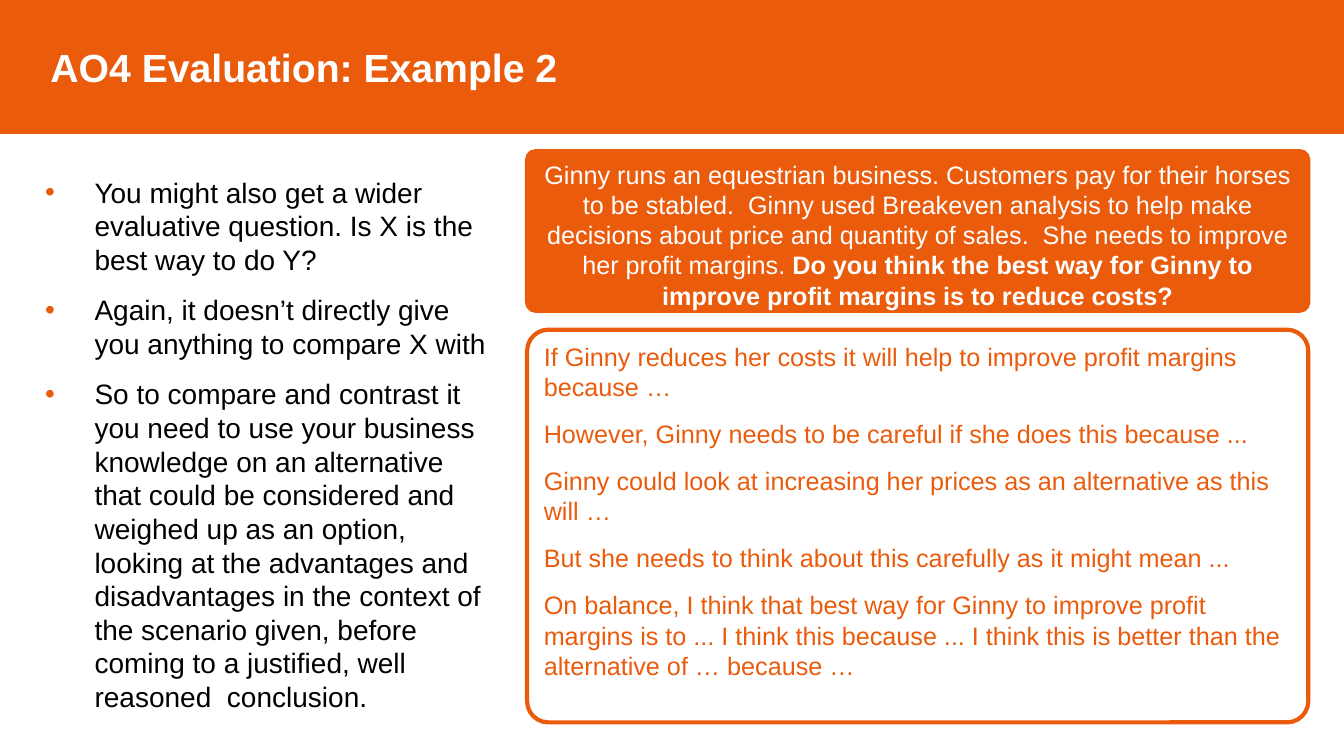
"""Build the AO4 evaluation slide with python-pptx."""
from lxml import etree
from pptx import Presentation
from pptx.dml.color import RGBColor
from pptx.enum.shapes import MSO_SHAPE
from pptx.enum.text import MSO_ANCHOR as ANCHOR, MSO_AUTO_SIZE as FIT, PP_ALIGN as ALIGN
from pptx.oxml.ns import qn
from pptx.util import Emu, Pt

PX = 9525
ORANGE = RGBColor(0xEA, 0x5B, 0x0C)
WHITE = RGBColor(0xFF, 0xFF, 0xFF)
BLACK = RGBColor(0, 0, 0)

ADVICE = [
    "You might also get a wider evaluative question. Is X is the best way to do Y?",
    "Again, it doesn’t directly give you anything to compare X with",
    "So to compare and contrast it you need to use your business knowledge on an "
    "alternative that could be considered and weighed up as an option, looking at the "
    "advantages and disadvantages in the context of the scenario given, before coming "
    "to a justified, well reasoned  conclusion.",
]
SCENARIO = (
    "Ginny runs an equestrian business. Customers pay for their horses to be stabled.  "
    "Ginny used Breakeven analysis to help make decisions about price and quantity of "
    "sales.  She needs to improve her profit margins. "
)
QUESTION = ("Do you think the best way for Ginny to improve profit margins is to reduce "
            "costs?")
STARTERS = [
    "If Ginny reduces her costs it will help to improve profit margins because …",
    "However, Ginny needs to be careful if she does this because ...",
    "Ginny could look at increasing her prices as an alternative as this will …",
    "But she needs to think about this carefully as it might mean ...",
    "On balance, I think that best way for Ginny to improve profit margins is to ... "
    "I think this because ... I think this is better than the alternative of … because …",
]


def px(n):
    return Emu(n * PX)


def place(sp, box):
    for name, n in zip(("left", "top", "width", "height"), box):
        setattr(sp, name, px(n))


def outline(sp, width):
    sp.line.color.rgb = ORANGE
    sp.line.width = Pt(width)


def format_frame(tf, **values):
    base = dict(word_wrap=True, auto_size=FIT.NONE, vertical_anchor=ANCHOR.TOP,
                margin_left=px(10), margin_right=px(10),
                margin_top=px(5), margin_bottom=px(5))
    for name, value in {**base, **values}.items():
        setattr(tf, name, value)


def add_run(p, text, size, color, bold=False):
    r = p.add_run()
    r.text = text
    r.font.color.rgb = color
    for name, value in dict(name="Arial", size=Pt(size), bold=bold).items():
        setattr(r.font, name, value)


def write(tf, paragraphs, size, color, **values):
    """Fill a frame with paragraphs, each a list of (text, bold) runs."""
    base = dict(alignment=ALIGN.LEFT, line_spacing=1.0,
                space_before=Pt(0), space_after=Pt(0))
    for i, runs in enumerate(paragraphs):
        p = tf.add_paragraph() if i else tf.paragraphs[0]
        for name, value in {**base, **values}.items():
            setattr(p, name, value)
        for text, bold in runs:
            add_run(p, text, size, color, bold)


def add_bullet(p, indent):
    pPr = p._p.get_or_add_pPr()
    pPr.set("marL", str(px(indent)))
    pPr.set("indent", str(-px(indent)))
    clr = etree.SubElement(pPr, qn("a:buClr"))
    etree.SubElement(clr, qn("a:srgbClr"), val=str(ORANGE))
    etree.SubElement(pPr, qn("a:buFont"), typeface="Arial")
    etree.SubElement(pPr, qn("a:buChar"), char="•")


def title_band(s, box):
    sp = s.shapes.title
    place(sp, box)
    sp.fill.solid()
    sp.fill.fore_color.rgb = ORANGE
    outline(sp, 1)
    format_frame(sp.text_frame, vertical_anchor=ANCHOR.MIDDLE, margin_left=px(48))
    write(sp.text_frame, [[("AO4 Evaluation: Example 2", True)]], 28, WHITE)


def advice_list(s, box):
    sp = s.placeholders[1]
    place(sp, box)
    format_frame(sp.text_frame, auto_size=FIT.SHAPE_TO_FIT_TEXT)
    write(sp.text_frame, [[(text, False)] for text in ADVICE], 20, BLACK,
          space_after=Pt(12))
    for p in sp.text_frame.paragraphs:
        add_bullet(p, 47)


def rounded_panel(s, box):
    sp = s.shapes.add_shape(MSO_SHAPE.ROUNDED_RECTANGLE, *map(px, box))
    sp.adjustments[0] = 0.054
    sp.shadow.inherit = False
    outline(sp, 3)
    format_frame(sp.text_frame)
    return sp


def scenario_panel(s, box):
    sp = rounded_panel(s, box)
    sp.fill.solid()
    sp.fill.fore_color.rgb = ORANGE
    write(sp.text_frame, [[(SCENARIO, False), (QUESTION, True)]], 18, WHITE,
          alignment=ALIGN.CENTER)


def starters_panel(s, box):
    sp = rounded_panel(s, box)
    sp.fill.background()
    write(sp.text_frame, [[(text, False)] for text in STARTERS], 18, ORANGE,
          space_after=Pt(12))


def main():
    prs = Presentation()
    prs.slide_width, prs.slide_height = px(1280), px(720)
    s = prs.slides.add_slide(prs.slide_layouts[1])
    title_band(s, (0, 0, 1280, 127))
    advice_list(s, (33, 162, 445, 575))
    scenario_panel(s, (502, 144, 744, 152))
    starters_panel(s, (502, 314, 744, 374))
    prs.save("out.pptx")


if __name__ == "__main__":
    main()
